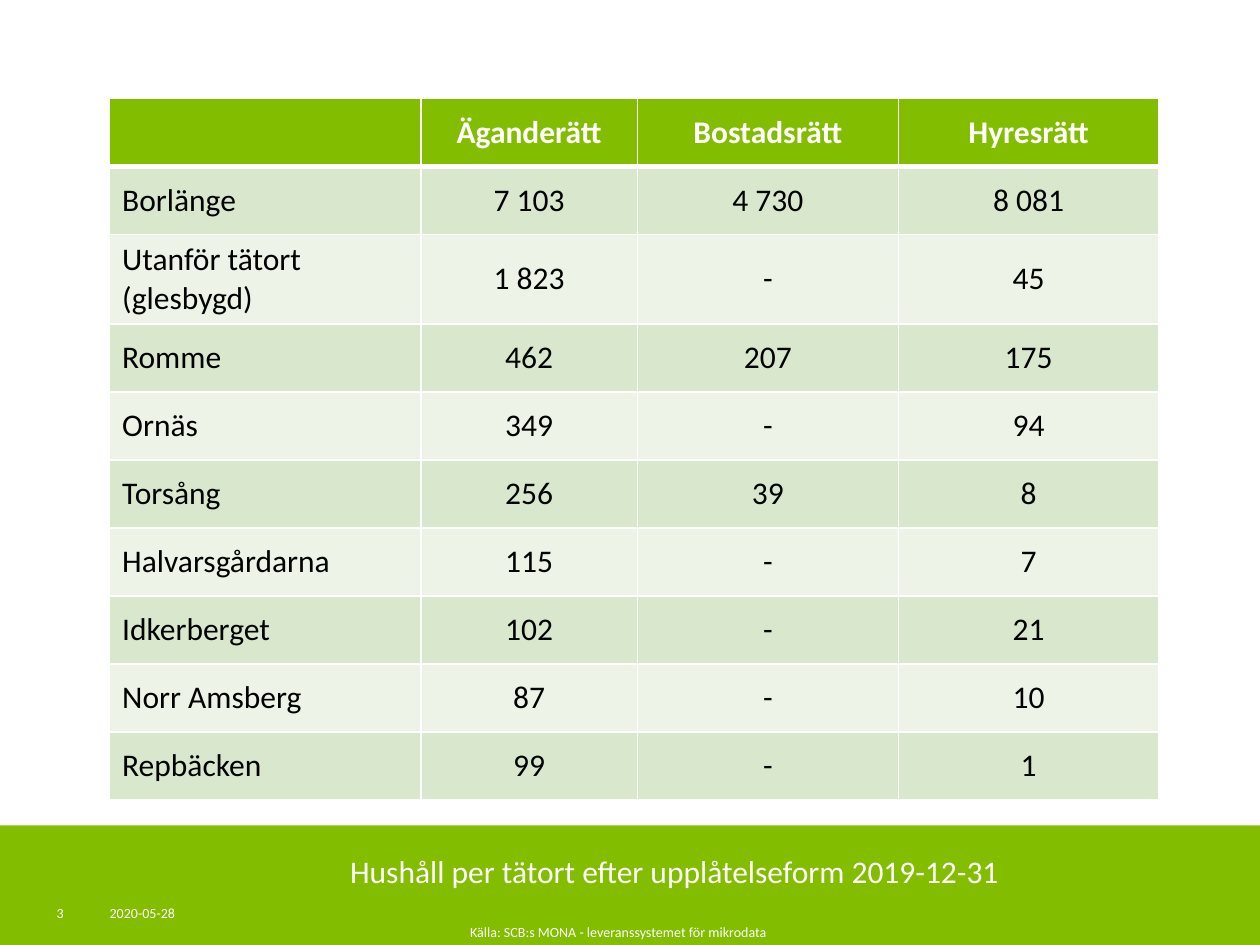
from lxml.etree import SubElement
from pptx import Presentation
from pptx.dml.color import RGBColor
from pptx.enum.shapes import MSO_SHAPE
from pptx.enum.text import MSO_ANCHOR as ANCHOR, PP_ALIGN as ALIGN
from pptx.oxml.ns import qn
from pptx.util import Inches, Pt

GREEN, WHITE, BLACK = "83BD00", "FFFFFF", "000000"
BANDS = ["EDF4E7", "D9E8CC"]
ROW_H = 0.54
COLS = [2.47, 1.72, 2.07, 2.07]
ROWS = [
    ["", "Äganderätt", "Bostadsrätt", "Hyresrätt"],
    ["Borlänge", "7 103", "4 730", "8 081"],
    ["Utanför tätort (glesbygd)", "1 823", "-", "45"],
    ["Romme", "462", "207", "175"],
    ["Ornäs", "349", "-", "94"],
    ["Torsång", "256", "39", "8"],
    ["Halvarsgårdarna", "115", "-", "7"],
    ["Idkerberget", "102", "-", "21"],
    ["Norr Amsberg", "87", "-", "10"],
    ["Repbäcken", "99", "-", "1"],
]


def paint(fmt, color):
    """Make a fill solid in the given hex colour."""
    fmt.solid()
    fmt.fore_color.rgb = RGBColor.from_string(color)


def write(tf, text, align, color, **font):
    """Put one Calibri paragraph into a text frame."""
    p = tf.paragraphs[0]
    p.alignment = align
    r = p.add_run()
    r.text = text
    for name, value in {"name": "Calibri", **font}.items():
        setattr(r.font, name, value)
    paint(r.font.fill, color)


prs = Presentation()
prs.slide_width, prs.slide_height = Inches(10), Inches(7.5)
s = prs.slides.add_slide(prs.slide_layouts[6])

# Footer band
band = s.shapes.add_shape(MSO_SHAPE.RECTANGLE, 0, Inches(6.55), prs.slide_width, Inches(0.95))
band.shadow.inherit = False
paint(band.fill, GREEN)
band.line.fill.background()

# Table of households
table = s.shapes.add_table(len(ROWS), len(COLS), Inches(0.87), Inches(0.78),
                           Inches(sum(COLS)), Inches(ROW_H * len(ROWS))).table
for col, width in zip(table.columns, COLS):
    col.width = Inches(width)
for i, row in enumerate(ROWS):
    table.rows[i].height = Inches(ROW_H)
    for j, text in enumerate(row):
        cell = table.cell(i, j)
        cell.vertical_anchor = ANCHOR.MIDDLE
        tcPr = cell._tc.get_or_add_tcPr()
        for side in "LRTB":
            heavy = (i, side) in [(0, "B"), (1, "T")]
            ln = SubElement(tcPr, qn(f"a:ln{side}"), w=str(Pt(3 if heavy else 1)))
            SubElement(SubElement(ln, qn("a:solidFill")), qn("a:srgbClr"), val=WHITE)
        paint(cell.fill, BANDS[i % 2] if i else GREEN)
        if text:
            write(cell.text_frame, text, ALIGN.CENTER if j else ALIGN.LEFT,
                  BLACK if i else WHITE, size=Pt(18), bold=i == 0)

# Footer texts: text, box, size, alignment, anchor, side and top insets
FOOTER = [
    ("2020-05-28", (0.87, 7.18, 0.71, 0.32), 8, ALIGN.LEFT, ANCHOR.TOP, 0, 0),
    ("3", (0.45, 7.18, 0.31, 0.32), 8, ALIGN.LEFT, ANCHOR.TOP, 0, 0),
    ("Källa: SCB:s MONA - leveranssystemet för mikrodata",
     (2.27, 7.04, 5.28, 0.47), 8, ALIGN.CENTER, ANCHOR.BOTTOM, 0.1, 0.05),
    ("Hushåll per tätort efter upplåtelseform 2019-12-31",
     (2.68, 6.71, 5.55, 0.4), 18, ALIGN.LEFT, ANCHOR.TOP, 0.1, 0.05),
]
for text, box, size, align, anchor, side, top in FOOTER:
    tf = s.shapes.add_textbox(*map(Inches, box)).text_frame
    tf.word_wrap = True
    tf.vertical_anchor = anchor
    tf.margin_left = tf.margin_right = Inches(side)
    tf.margin_top = tf.margin_bottom = Inches(top)
    write(tf, text, align, WHITE, size=Pt(size))

prs.save("out.pptx")
